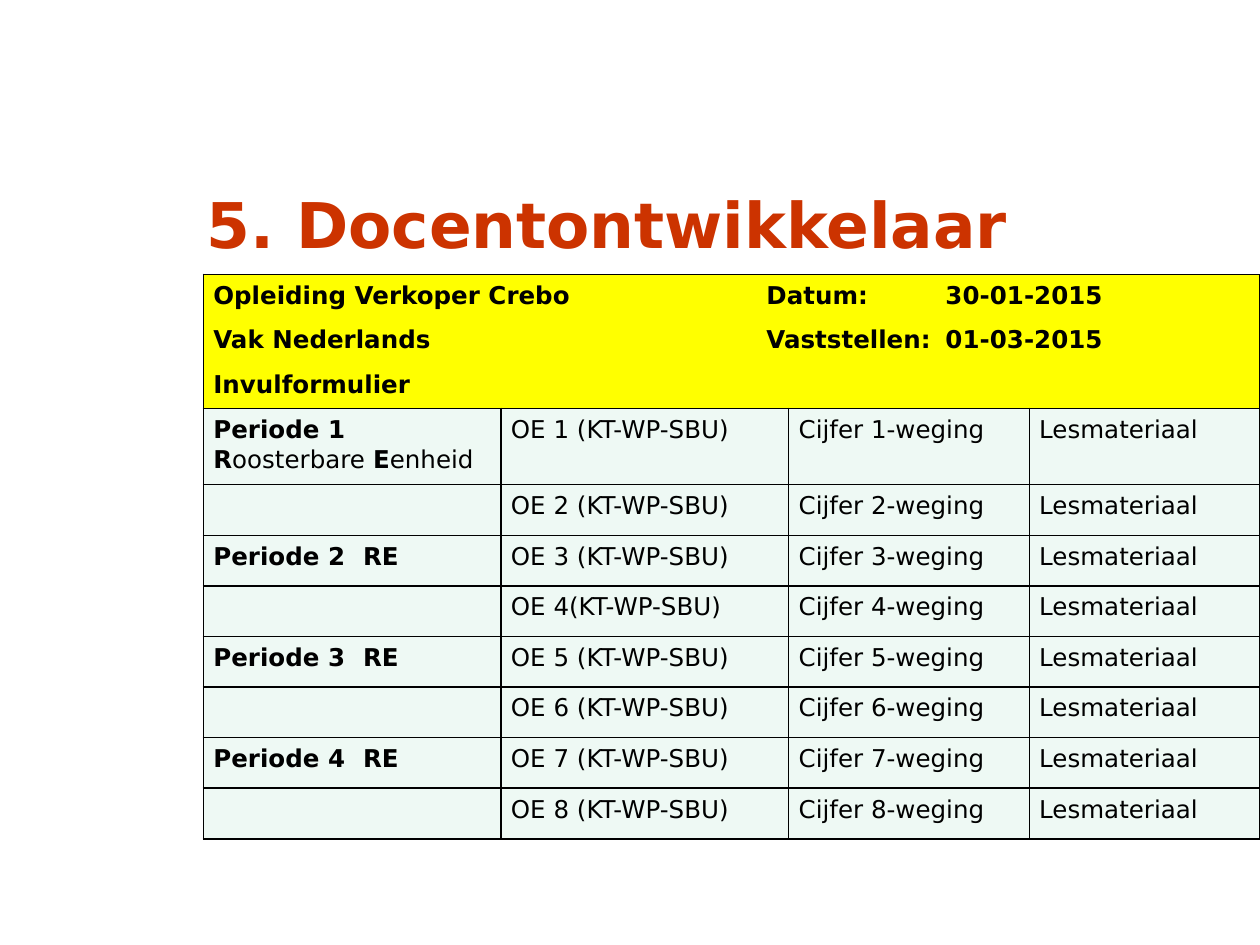
import pptx
import pptx.dml.color
import pptx.enum.text
import pptx.oxml
import pptx.oxml.ns
import pptx.util
from pptx.util import Cm

FONT = "DejaVu Sans"
COLORS = {
    "title": "CC3300",
    "text": "000000",
    "border": "000000",
    "header": "FFFF00",
    "body": "EEF9F4",
}
COLUMN_WIDTHS = [6, 5.8, 4.85, 4.65]
HEADER_HEIGHT, FIRST_HEIGHT, ROW_HEIGHT = 2.7, 1.54, 1.02
HEADER_TABS = [11.15, 14.76]
PERIOD_TABS = [3.02]
HEADER_LINES = [
    [("Opleiding Verkoper Crebo\tDatum:\t30-01-2015", True)],
    [("Vak Nederlands\tVaststellen:\t01-03-2015", True)],
    [("Invulformulier", True)],
]
FIRST_PERIOD = [("Periode 1 R", True), ("oosterbare ", False), ("E", True), ("enheid", False)]


def rgb(name):
    return pptx.dml.color.RGBColor.from_string(COLORS[name])


def write_text(frame, lines, size=14, color="text", spacing=1.07, after=8, tabs=()):
    """Fill a text frame; each line is a list of (text, bold) runs."""
    frame.word_wrap = True
    for index, runs in enumerate(lines):
        paragraph = frame.paragraphs[0] if index == 0 else frame.add_paragraph()
        paragraph.alignment = pptx.enum.text.PP_ALIGN.LEFT
        paragraph.line_spacing = spacing
        paragraph.space_before = pptx.util.Pt(0)
        paragraph.space_after = pptx.util.Pt(after)
        if tabs:
            stops = "".join(f'<a:tab pos="{Cm(tab)}" algn="l"/>' for tab in tabs)
            paragraph._p.get_or_add_pPr().append(pptx.oxml.parse_xml(
                f'<a:tabLst {pptx.oxml.ns.nsdecls("a")}>{stops}</a:tabLst>'))
        for text, bold in runs:
            run = paragraph.add_run()
            run.text = text
            run.font.name = FONT
            run.font.size = pptx.util.Pt(size)
            run.font.bold = bold
            run.font.color.rgb = rgb(color)


def format_cell(cell, fill):
    cell.margin_left = cell.margin_right = Cm(0.2)
    cell.margin_top = cell.margin_bottom = Cm(0.1)
    properties = cell._tc.get_or_add_tcPr()
    for side in ("lnL", "lnR", "lnT", "lnB"):
        properties.append(pptx.oxml.parse_xml(
            f'<a:{side} {pptx.oxml.ns.nsdecls("a")} w="{pptx.util.Pt(1)}"><a:solidFill>'
            f'<a:srgbClr val="{COLORS["border"]}"/></a:solidFill></a:{side}>'))
    cell.fill.solid()
    cell.fill.fore_color.rgb = rgb(fill)


def place_title(slide, left, top, width, height):
    title = slide.shapes.title
    title.left, title.top, title.width, title.height = map(Cm, (left, top, width, height))
    title.text_frame.vertical_anchor = pptx.enum.text.MSO_ANCHOR.MIDDLE
    title.text_frame.auto_size = pptx.enum.text.MSO_AUTO_SIZE.NONE
    write_text(title.text_frame, [[("5. Docentontwikkelaar", True)]],
               size=36, color="title", spacing=0.9, after=0)


def body_row(number):
    """Return the runs of the four cells for one learning unit."""
    if number == 1:
        period = FIRST_PERIOD
    elif number % 2:
        period = [(f"Periode {number // 2 + 1}\tRE", True)]
    else:
        period = []
    gap = "" if number == 4 else " "
    return [
        period,
        [(f"OE {number}{gap}(KT-WP-SBU)", False)],
        [(f"Cijfer {number}-weging", False)],
        [("Lesmateriaal", False)],
    ]


def place_schedule(slide, left, top):
    heights = [HEADER_HEIGHT, FIRST_HEIGHT] + [ROW_HEIGHT] * 7
    table = slide.shapes.add_table(
        len(heights), len(COLUMN_WIDTHS), Cm(left), Cm(top),
        Cm(sum(COLUMN_WIDTHS)), Cm(sum(heights))).table
    table.horz_banding = table.first_row = False
    for column, width in zip(table.columns, COLUMN_WIDTHS):
        column.width = Cm(width)
    for index, (row, height) in enumerate(zip(table.rows, heights)):
        row.height = Cm(height)
        for cell in row.cells:
            format_cell(cell, "body" if index else "header")

    header = table.cell(0, 0)
    header.merge(table.cell(0, len(COLUMN_WIDTHS) - 1))
    write_text(header.text_frame, HEADER_LINES, tabs=HEADER_TABS)
    for number in range(1, len(heights)):
        for column, runs in enumerate(body_row(number)):
            if runs:
                write_text(table.cell(number, column).text_frame, [runs],
                           tabs=PERIOD_TABS if column == 0 and number > 1 else ())


def main():
    presentation = pptx.Presentation()
    presentation.slide_width, presentation.slide_height = Cm(25.4), Cm(19.05)
    slide = presentation.slides.add_slide(presentation.slide_layouts.get_by_name("Title Only"))
    place_schedule(slide, 4.1, 5.53)
    place_title(slide, 3.91, 3.53, 18.29, 2.13)
    presentation.save("out.pptx")


if __name__ == "__main__":
    main()
